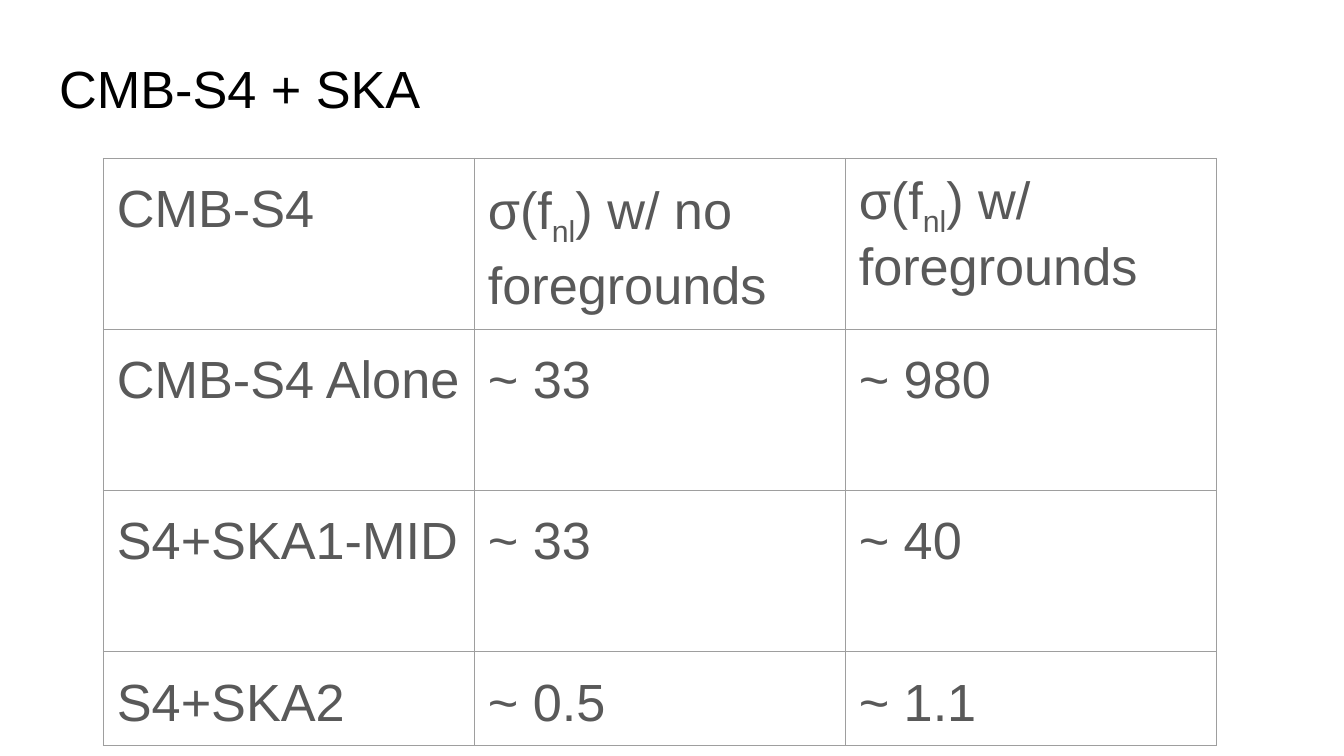
"""Build a slide with a table of forecast errors for CMB-S4 and SKA."""
from dataclasses import dataclass

from lxml import etree
from pptx import Presentation
from pptx.dml.color import RGBColor
from pptx.enum.text import MSO_ANCHOR, PP_ALIGN
from pptx.oxml.ns import qn
from pptx.util import Inches, Pt

LEFT = PP_ALIGN.LEFT
TOP = MSO_ANCHOR.TOP
TITLE_ONLY = 5
WIDE = Inches(10)
HIGH = WIDE * 9 // 16


@dataclass(frozen=True)
class Theme:
    font: str = "Arial"
    size: float = 28
    title: str = "000000"
    body: str = "595959"
    rule: str = "9E9E9E"
    width: float = 0.75
    inset: float = 0.1


@dataclass(frozen=True)
class Entry:
    text: str
    line: float = 1.15
    after: float = 16


THEME = Theme()
ROWS = [
    [Entry("CMB-S4", after=0), Entry("σ(f_nl_) w/ no foregrounds"),
     Entry("σ(f_nl_) w/ foregrounds", line=1.0, after=0)],
    [Entry("CMB-S4 Alone"), Entry("~ 33"), Entry("~ 980")],
    [Entry("S4+SKA1-MID"), Entry("~ 33"), Entry("~ 40")],
    [Entry("S4+SKA2"), Entry("~ 0.5"), Entry("~ 1.1")],
]
HEIGHTS = [1.2, 1.2, 1.2, 0.67]
COL = 2.76


def write(frame, text: str, *, color: str, line: float = 1.0, after: float = 0) -> None:
    """Write one paragraph, lowering any part held between underscores."""
    para = frame.paragraphs[0]
    para.alignment = LEFT
    para.line_spacing = line
    para.space_before = Pt(0)
    para.space_after = Pt(after)
    for i, part in enumerate(text.split("_")):
        run = para.add_run()
        run.text = part
        run.font.name = THEME.font
        run.font.size = Pt(THEME.size)
        run.font.bold = False
        run.font.color.rgb = RGBColor.from_string(color)
        if i % 2:
            run._r.get_or_add_rPr().set("baseline", "-25000")


def pad(box) -> None:
    """Give a cell or text frame equal insets on all sides."""
    for side in ("left", "right", "top", "bottom"):
        setattr(box, f"margin_{side}", Inches(THEME.inset))
    box.vertical_anchor = TOP


def edge(cell) -> None:
    """Draw thin rules on the four sides of a cell."""
    props = cell._tc.get_or_add_tcPr()
    for i, side in enumerate(("lnL", "lnR", "lnT", "lnB")):
        rule = etree.Element(qn(f"a:{side}"), w=str(Pt(THEME.width)))
        fill = etree.SubElement(rule, qn("a:solidFill"))
        etree.SubElement(fill, qn("a:srgbClr"), val=THEME.rule)
        props.insert(i, rule)


def add_title(slide, text: str) -> None:
    """Place and fill the title."""
    title = slide.shapes.title
    title.left, title.top = Inches(0.34), Inches(0.32)
    title.width, title.height = Inches(9.32), Inches(0.63)
    pad(title.text_frame)
    write(title.text_frame, text, color=THEME.title)


def add_grid(slide, rows: list[list[Entry]]) -> None:
    """Add the table and fill its cells."""
    count = len(rows[0])
    table = slide.shapes.add_table(
        len(rows), count, Inches(0.77), Inches(1.18),
        Inches(COL * count), Inches(sum(HEIGHTS))).table
    table.first_row = table.horz_banding = False
    for col in table.columns:
        col.width = Inches(COL)
    for r, (row, high) in enumerate(zip(rows, HEIGHTS)):
        table.rows[r].height = Inches(high)
        for c, entry in enumerate(row):
            cell = table.cell(r, c)
            pad(cell)
            cell.fill.background()
            edge(cell)
            write(cell.text_frame, entry.text, color=THEME.body,
                  line=entry.line, after=entry.after)


def main() -> None:
    """Build and save the slide."""
    deck = Presentation()
    deck.slide_width, deck.slide_height = WIDE, HIGH
    slide = deck.slides.add_slide(deck.slide_layouts[TITLE_ONLY])
    add_title(slide, "CMB-S4 + SKA")
    add_grid(slide, ROWS)
    deck.save("out.pptx")


if __name__ == "__main__":
    main()
